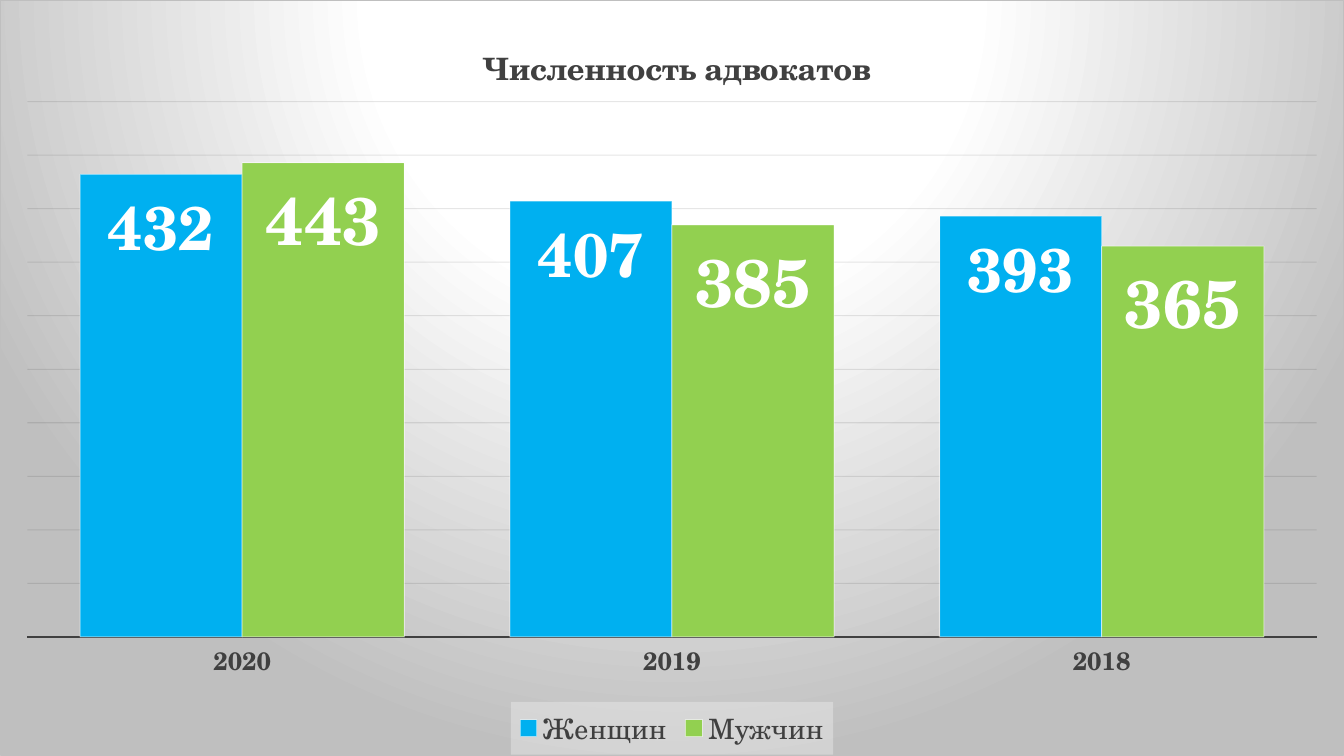
import pptx
import pptx.chart.data
import pptx.dml.color
import pptx.enum.chart
import pptx.oxml
import pptx.oxml.ns
import pptx.util
from pptx.util import Inches

COLORS = {
    "women": "00B0F0",
    "men": "92D050",
    "text": "404040",
    "white": "FFFFFF",
    "edge": "BFBFBF",
    "grid": "0D0D0D",
    "legend": "F2F2F2",
}
NAMESPACES = pptx.oxml.ns.nsdecls("c", "a")
qn = pptx.oxml.ns.qn


class LawyerSlide:
    font_name = "TeX Gyre Schola"

    def __init__(self, presentation):
        self.slide = presentation.slides.add_slide(presentation.slide_layouts[6])

    def color(self, name):
        return pptx.dml.color.RGBColor.from_string(COLORS[name])

    def style_font(self, font, size, color, bold=False):
        font.name = self.font_name
        font.size = pptx.util.Pt(size)
        font.bold = bold
        font.color.rgb = self.color(color)

    def style_line(self, line, color, width, opacity=100):
        line.color.rgb = self.color(color)
        line.width = pptx.util.Pt(width)
        if opacity < 100:
            for tint in line._get_or_add_ln().iter(qn("a:srgbClr")):
                alpha = tint.makeelement(qn("a:alpha"), {"val": str(opacity * 1000)})
                tint.append(alpha)

    def place(self, element, index, **fractions):
        for layout in element.findall(qn("c:layout")):
            element.remove(layout)
        target = '<c:layoutTarget val="inner"/>' if index == 0 else ""
        modes = '<c:xMode val="edge"/><c:yMode val="edge"/>'
        values = "".join(f'<c:{key} val="{value}"/>' for key, value in fractions.items())
        element.insert(index, pptx.oxml.parse_xml(
            f"<c:layout {NAMESPACES}><c:manualLayout>{target}{modes}{values}"
            "</c:manualLayout></c:layout>"))

    def add_area_style(self, predecessor, fill, line=""):
        predecessor.addnext(pptx.oxml.parse_xml(
            f"<c:spPr {NAMESPACES}>{fill}{line}</c:spPr>"))

    def add_background(self, chart):
        stops = "".join(
            f'<a:gs pos="{position * 1000}"><a:srgbClr val="{COLORS[name]}"/></a:gs>'
            for position, name in ((0, "white"), (39, "white"), (100, "edge")))
        fill = (f'<a:gradFill><a:gsLst>{stops}</a:gsLst><a:path path="circle">'
                '<a:fillToRect l="50000" t="-80000" r="50000" b="180000"/>'
                "</a:path></a:gradFill>")
        line = (f'<a:ln w="9525"><a:solidFill><a:srgbClr val="{COLORS["edge"]}"/>'
                "</a:solidFill></a:ln>")
        self.add_area_style(chart._chartSpace.find(qn("c:chart")), fill, line)

    def add_column_chart(self, years, counts, left, top, width, height):
        data = pptx.chart.data.CategoryChartData()
        data.categories = years
        for name, values in counts.items():
            data.add_series(name, values)
        chart = self.slide.shapes.add_chart(
            pptx.enum.chart.XL_CHART_TYPE.COLUMN_CLUSTERED,
            left, top, width, height, data).chart
        self.style_font(chart.font, 10, "text")
        self.add_background(chart)
        self.place(chart._chartSpace.find(f".//{qn('c:plotArea')}"), 0,
                   x=0.02, y=0.134, w=0.96, h=0.709)
        return chart

    def format_title(self, chart, text):
        chart.has_title = True
        title = chart.chart_title
        title.text_frame.text = text
        self.style_font(title.text_frame.paragraphs[0].font, 22, "text", True)
        title.include_in_layout = False
        self.place(title._element, 1, x=0.355, y=0.047)

    def format_series(self, plot, colors, label_sizes):
        plot.gap_width = 65
        plot.overlap = 0
        plot.vary_by_categories = False
        for series, color, size in zip(plot.series, colors, label_sizes):
            series.format.fill.solid()
            series.format.fill.fore_color.rgb = self.color(color)
            self.style_line(series.format.line, "white", 0.75, 50)
            labels = series.data_labels
            labels.show_value = True
            labels.position = pptx.enum.chart.XL_LABEL_POSITION.INSIDE_END
            self.style_font(labels.font, size, "white", True)

    def format_axes(self, chart):
        no_tick = pptx.enum.chart.XL_TICK_MARK.NONE
        years_axis, count_axis = chart.category_axis, chart.value_axis
        years_axis.major_tick_mark = no_tick
        self.style_font(years_axis.tick_labels.font, 18, "text", True)
        self.style_line(years_axis.format.line, "text", 1.5)
        count_axis.minimum_scale, count_axis.maximum_scale = 0, 500
        count_axis.major_unit = 50
        count_axis.has_major_gridlines = True
        self.style_line(count_axis.major_gridlines.format.line, "grid", 0.75, 10)
        count_axis.visible = False

    def format_legend(self, chart):
        chart.has_legend = True
        legend = chart.legend
        legend.position = pptx.enum.chart.XL_LEGEND_POSITION.BOTTOM
        legend.include_in_layout = False
        self.style_font(legend.font, 20, "text")
        self.place(legend._element, 1, x=0.38, y=0.929, w=0.24, h=0.07)
        fill = (f'<a:solidFill><a:srgbClr val="{COLORS["legend"]}">'
                '<a:alpha val="39000"/></a:srgbClr></a:solidFill>')
        self.add_area_style(legend._element.find(qn("c:overlay")), fill)


def main():
    presentation = pptx.Presentation()
    presentation.slide_width = Inches(13.33)
    presentation.slide_height = Inches(7.5)
    page = LawyerSlide(presentation)
    lawyers = page.add_column_chart(
        ("2020", "2019", "2018"),
        {"Женщин": (432, 407, 393), "Мужчин": (443, 385, 365)},
        Inches(0), Inches(0), Inches(13.33), Inches(7.5))
    page.format_title(lawyers, "Численность адвокатов")
    page.format_series(lawyers.plots[0], ("women", "men"), (44, 48))
    page.format_axes(lawyers)
    page.format_legend(lawyers)
    presentation.save("out.pptx")


if __name__ == "__main__":
    main()
